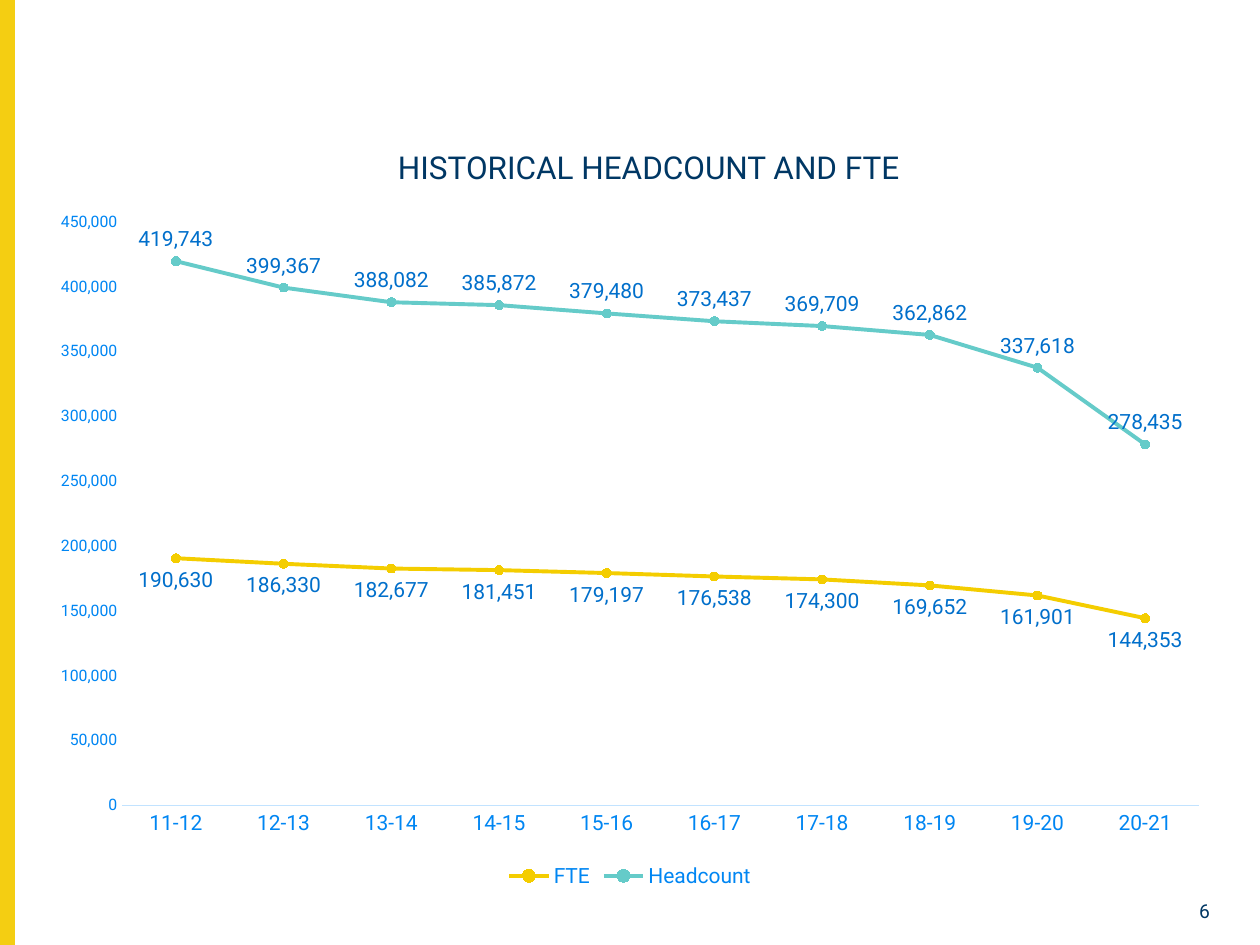
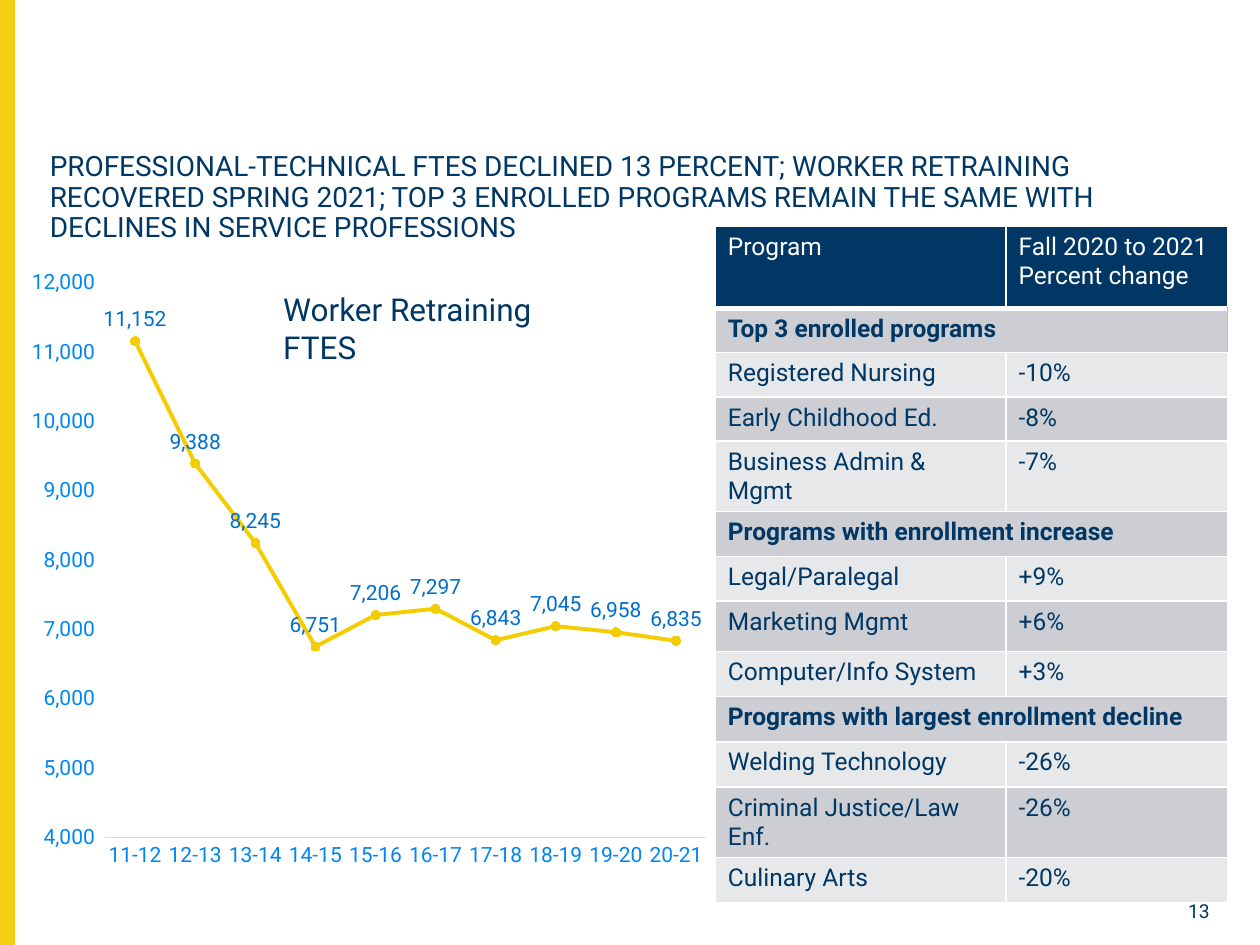
from dataclasses import dataclass
from lxml.etree import SubElement
from pptx import Presentation
from pptx.chart.data import CategoryChartData
from pptx.dml.color import RGBColor
from pptx.enum.chart import (XL_CHART_TYPE, XL_LABEL_POSITION, XL_LEGEND_POSITION,
                             XL_MARKER_STYLE, XL_TICK_MARK)
from pptx.enum.shapes import MSO_SHAPE
from pptx.enum.text import MSO_ANCHOR, MSO_AUTO_SIZE, PP_ALIGN
from pptx.oxml.ns import qn
from pptx.util import Cm, Pt


@dataclass(frozen=True)
class Theme:
    font: str = "Roboto"
    navy: str = "003764"
    white: str = "FFFFFF"
    band: str = "F4CE12"
    yellow: str = "F4CD00"
    teal: str = "65CBC9"
    axis_text: str = "0086F3"
    axis_line: str = "C2E3FF"
    value_text: str = "006FCB"
    dark_row: str = "CCCED3"
    light_row: str = "E7E8EA"
    group_edge: str = "BFBFBF"
    heading: int = 18
    long_heading: int = 16
    table: int = 14
    chart: int = 12
    small_axis: int = 9
    page_number: int = 11


THEME = Theme()
PLAIN_NUMBER = "#,##0"
ACCOUNTING = '_(* #,##0_);_(* \\(#,##0\\);_(* "-"??_);_('
YEARS = [f"{year}-{year + 1}" for year in range(11, 21)]

FTE = [190630, 186330, 182677, 181451, 179197, 176538, 174300, 169652, 161901, 144353]
HEADCOUNT = [419743, 399367, 388082, 385872, 379480, 373437, 369709, 362862, 337618, 278435]
RETRAINING = [11152, 9388, 8245, 6751, 7206, 7297, 6843, 7045, 6958, 6835]

PROGRAM_COLUMNS = [5.86, 4.46]
PROGRAM_ROWS = [
    ("Program", "Fall 2020 to 2021 Percent change", 1.65),
    ("Top 3 enrolled programs", None, 0.89),
    ("Registered Nursing", "-10%", 0.89),
    ("Early Childhood Ed.", "-8%", 0.89),
    ("Business Admin & Mgmt", "-7%", 0.99),
    ("Programs with enrollment increase", None, 0.91),
    ("Legal/Paralegal", "+9%", 0.89),
    ("Marketing Mgmt", "+6%", 1.02),
    ("Computer/Info System", "+3%", 0.91),
    ("Programs with largest enrollment decline", None, 0.91),
    ("Welding Technology", "-26%", 0.91),
    ("Criminal Justice/Law Enf.", "-26%", 0.91),
    ("Culinary Arts", "-20%", 0.91),
]


def color(value):
    return RGBColor.from_string(value)


def style_font(font, size, ink=THEME.navy, bold=False):
    font.name = THEME.font
    font.size = Pt(size)
    font.bold = bold
    font.color.rgb = color(ink)


def fill_text(frame, text, size, align=PP_ALIGN.LEFT):
    frame.word_wrap = True
    frame.text = text
    para = frame.paragraphs[0]
    para.alignment = align
    style_font(para.runs[0].font, size)
    return para


def add_page(deck, title, size, left, width, align):
    page = deck.slides.add_slide(deck.slide_layouts.get_by_name("Title Only"))
    heading = page.shapes.title
    heading.left, heading.top = Cm(left), Cm(2.95)
    heading.width, heading.height = Cm(width), Cm(1.08)
    frame = heading.text_frame
    frame.auto_size = MSO_AUTO_SIZE.NONE
    frame.vertical_anchor = MSO_ANCHOR.TOP
    fill_text(frame, title, size, align).line_spacing = 0.9
    return page


def add_master_band(deck, page):
    band = page.shapes.add_shape(MSO_SHAPE.RECTANGLE, 0, 0, Cm(0.28), deck.slide_height)
    band.shadow.inherit = False
    band.fill.solid()
    band.fill.fore_color.rgb = color(THEME.band)
    band.line.color.rgb = color(THEME.band)
    band.line.width = Pt(1)
    band.element.nvSpPr.cNvPr.set("id", "20")
    deck.slide_master.shapes.element.insert(2, band.element)


def add_label(page, text, size, place, align=PP_ALIGN.LEFT):
    box = page.shapes.add_textbox(*map(Cm, place))
    fill_text(box.text_frame, text, size, align)
    return box


def add_page_number(page, number):
    box = add_label(page, number, THEME.page_number, (23.34, 18.04, 1.3, 0.66), PP_ALIGN.RIGHT)
    box.text_frame.vertical_anchor = MSO_ANCHOR.MIDDLE


def style_axis(axis, size):
    axis.has_major_gridlines = False
    axis.major_tick_mark = axis.minor_tick_mark = XL_TICK_MARK.NONE
    style_font(axis.tick_labels.font, size, THEME.axis_text)


def style_series(series, ink, position, number_format):
    series.smooth = False
    series.format.line.color.rgb = color(ink)
    series.format.line.width = Pt(2.25)
    marker = series.marker
    marker.style = XL_MARKER_STYLE.CIRCLE
    marker.size = 5
    marker.format.fill.solid()
    marker.format.fill.fore_color.rgb = color(ink)
    marker.format.line.color.rgb = color(ink)
    labels = series.data_labels
    labels.show_value = True
    labels.position = position
    labels.number_format = number_format
    labels.number_format_is_linked = False
    style_font(labels.font, THEME.chart, THEME.value_text)


def add_line_chart(page, place, lines, scale, value_size, number_format):
    data = CategoryChartData(number_format=number_format)
    data.categories = YEARS
    for name, values, _, _ in lines:
        data.add_series(name, values)
    chart = page.shapes.add_chart(XL_CHART_TYPE.LINE_MARKERS, *map(Cm, place), data).chart
    chart.has_title = False
    style_font(chart.font, THEME.chart)
    chart.plots[0].vary_by_categories = False
    for series, (_, _, ink, position) in zip(chart.series, lines):
        style_series(series, ink, position, number_format)

    style_axis(chart.category_axis, THEME.chart)
    chart.category_axis.format.line.color.rgb = color(THEME.axis_line)
    chart.category_axis.format.line.width = Pt(0.75)
    value_axis = chart.value_axis
    style_axis(value_axis, value_size)
    value_axis.format.line.fill.background()
    value_axis.minimum_scale, value_axis.maximum_scale, value_axis.major_unit = scale
    value_axis.tick_labels.number_format = number_format
    value_axis.tick_labels.number_format_is_linked = False

    chart.has_legend = len(lines) > 1
    if chart.has_legend:
        chart.legend.position = XL_LEGEND_POSITION.BOTTOM
        chart.legend.include_in_layout = False
        style_font(chart.legend.font, THEME.chart, THEME.axis_text)


def add_borders(cell, right=THEME.white, bottom_width=1):
    properties = cell._tc.get_or_add_tcPr()
    edges = {"L": (THEME.white, 1), "R": (right, 1),
             "T": (THEME.white, 1), "B": (THEME.white, bottom_width)}
    for side, (ink, width) in edges.items():
        line = SubElement(properties, qn(f"a:ln{side}"), w=str(Pt(width)))
        SubElement(SubElement(line, qn("a:solidFill")), qn("a:srgbClr"), val=ink)


def add_program_table(page, left, top):
    heights = [height for _, _, height in PROGRAM_ROWS]
    table = page.shapes.add_table(len(heights), len(PROGRAM_COLUMNS), Cm(left), Cm(top),
                                  Cm(sum(PROGRAM_COLUMNS)), Cm(sum(heights))).table
    table.horz_banding = False
    for column, width in zip(table.columns, PROGRAM_COLUMNS):
        column.width = Cm(width)
    for index, (program, change, height) in enumerate(PROGRAM_ROWS):
        table.rows[index].height = Cm(height)
        is_header, is_group = index == 0, change is None
        row_fill = THEME.navy if is_header else THEME.dark_row if index % 2 else THEME.light_row
        for column, text in enumerate((program, change)):
            cell = table.cell(index, column)
            add_borders(cell, THEME.group_edge if index == 1 else THEME.white, 3 if is_header else 1)
            cell.fill.solid()
            cell.fill.fore_color.rgb = color(row_fill)
            if text:
                cell.text = text
                style_font(cell.text_frame.paragraphs[0].runs[0].font, THEME.table,
                           THEME.white if is_header else THEME.navy, is_group)
        if is_group:
            table.cell(index, 0).merge(table.cell(index, 1))


def add_headcount_page(deck):
    page = add_page(deck, "HISTORICAL HEADCOUNT AND FTE", THEME.heading,
                    1.5, 23.16, PP_ALIGN.CENTER)
    lines = [("FTE", FTE, THEME.yellow, XL_LABEL_POSITION.BELOW),
             ("Headcount", HEADCOUNT, THEME.teal, XL_LABEL_POSITION.ABOVE)]
    add_line_chart(page, (0.75, 4.01, 23.9, 14), lines, (0, 450000, 50000),
                   THEME.small_axis, PLAIN_NUMBER)
    add_page_number(page, "6")
    return page


def add_retraining_page(deck):
    title = ("PROFESSIONAL-TECHNICAL FTES DECLINED 13 PERCENT; WORKER RETRAINING "
             "RECOVERED SPRING 2021; TOP 3 ENROLLED PROGRAMS REMAIN THE SAME WITH "
             "DECLINES IN SERVICE PROFESSIONS")
    page = add_page(deck, title, THEME.long_heading, 0.75, 23.9, PP_ALIGN.LEFT)
    add_program_table(page, 14.42, 4.57)
    lines = [("Series 1", RETRAINING, THEME.yellow, XL_LABEL_POSITION.ABOVE)]
    add_line_chart(page, (0.25, 5.19, 14.27, 12.55), lines, (4000, 12000, 1000),
                   THEME.chart, ACCOUNTING)
    add_label(page, "Worker Retraining FTES", THEME.heading, (5.46, 5.72, 7.1, 1.02))
    add_page_number(page, "13")


def main():
    deck = Presentation()
    deck.slide_width, deck.slide_height = Cm(25.4), Cm(19.05)
    headcount_page = add_headcount_page(deck)
    add_master_band(deck, headcount_page)
    add_retraining_page(deck)
    deck.save("out.pptx")


if __name__ == "__main__":
    main()
